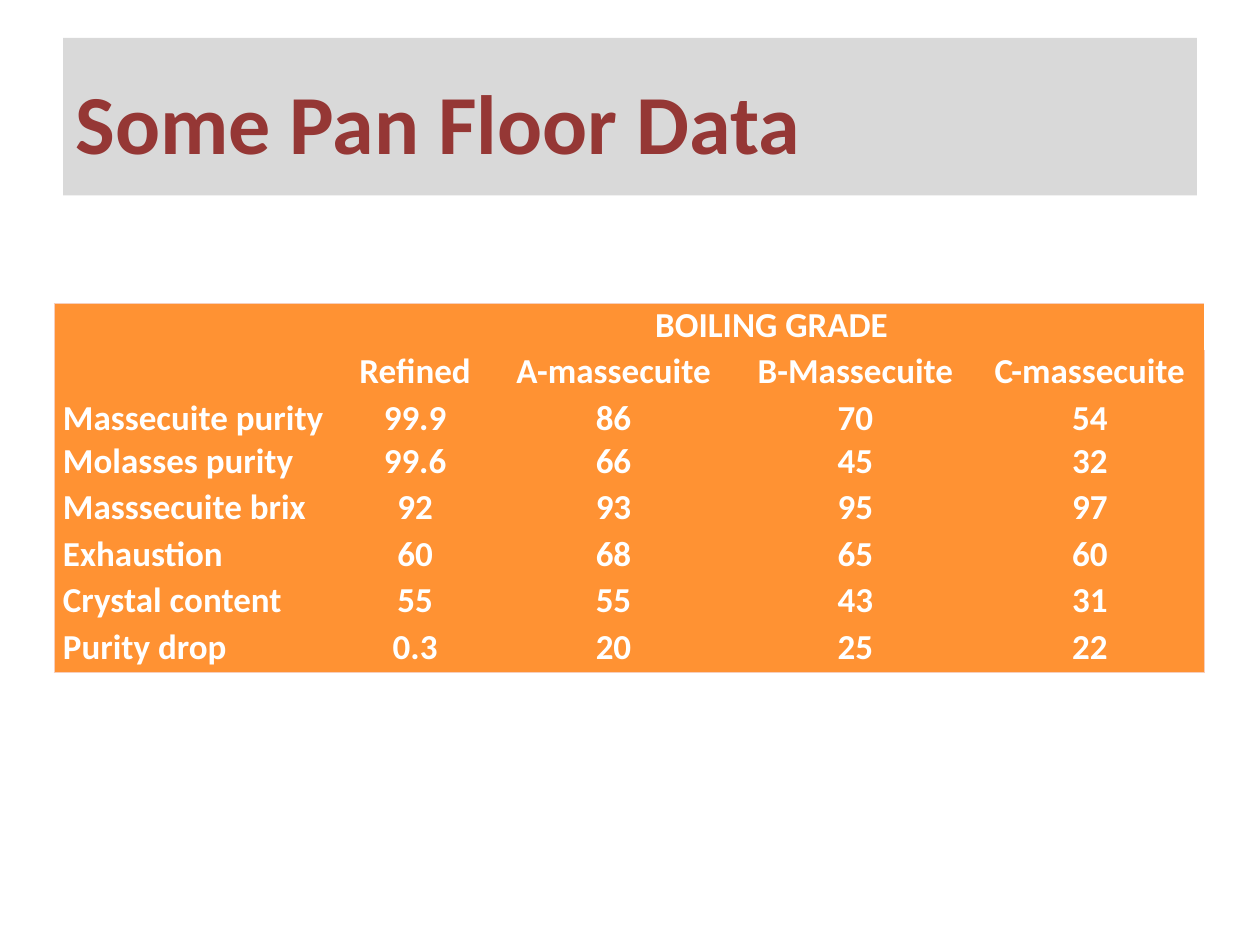
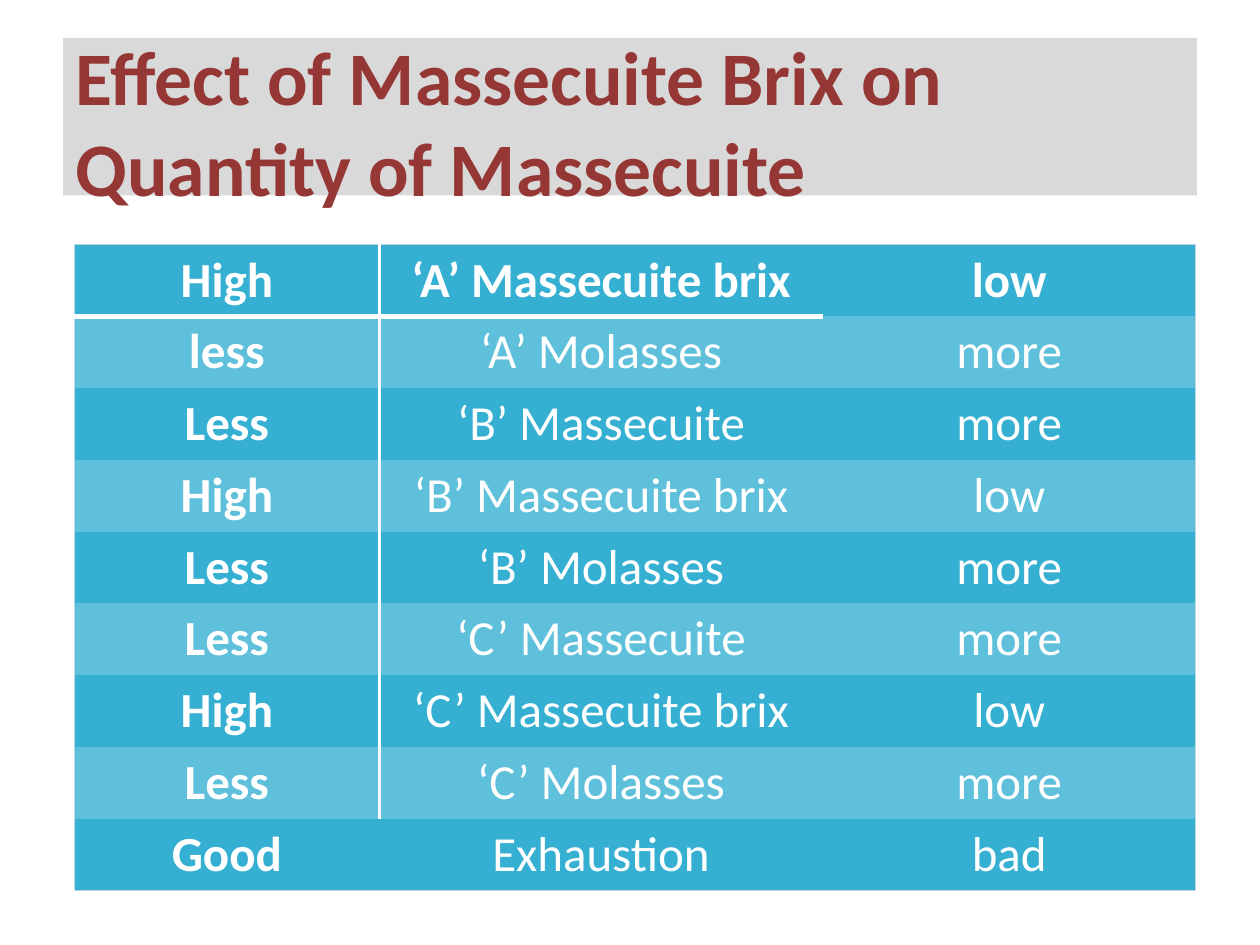
from lxml.etree import SubElement
from pptx import Presentation
from pptx.dml.color import RGBColor
from pptx.enum.text import MSO_ANCHOR, MSO_AUTO_SIZE, PP_ALIGN
from pptx.oxml.ns import qn
from pptx.util import Pt

PX = 9144  # 100 px to the inch
TITLE_ONLY = 5
PLAIN_TABLE_STYLE = "{2D5ABB26-0587-4C30-8999-92F81FD0307C}"
WHITE = "FFFFFF"
TITLE_BAND = "D9D9D9"
TITLE_RED = "953735"
ORANGE = "FF9233"
BLUE = "36B0D2"
LIGHT_BLUE = "5EC0DB"


def write(paragraph, text, size, color, bold, alignment):
    run = paragraph.add_run()
    run.text = text
    paragraph.alignment = alignment
    font_format = {"name": "Calibri", "size": Pt(size), "bold": bold}
    for name, value in font_format.items():
        setattr(run.font, name, value)
    run.font.color.rgb = RGBColor.from_string(color)


def add_border(cell, side, color, width):
    """Add one cell edge; call in the order L, R, T, B and before the fill."""
    line = SubElement(cell._tc.get_or_add_tcPr(), qn(f"a:ln{side}"), w=str(Pt(width)))
    fill = SubElement(line, qn("a:solidFill"))
    SubElement(fill, qn("a:srgbClr"), val=color)


pan_floor = {
    "title": "Some Pan Floor Data",
    "title_size": 48,
    "position": (43, 241),
    "columns": [226, 121, 194, 190, 182],
    "row_heights": [37, 37, 34] + [37] * 5,
    "text_size": 20,
    "anchor": MSO_ANCHOR.TOP,
    "first_column": PP_ALIGN.LEFT,
    "all_bold": True,
    "bands": [ORANGE],
    "outline": "F7CEBB",
    "merge": ((0, 1), (0, 4)),
    "inner_edges": {},
    "rows": [
        ["", "BOILING GRADE", "", "", ""],
        ["", "Refined", "A-massecuite", "B-Massecuite", "C-massecuite"],
        ["Massecuite purity", "99.9", "86", "70", "54"],
        ["Molasses purity", "99.6", "66", "45", "32"],
        ["Masssecuite brix", "92", "93", "95", "97"],
        ["Exhaustion", "60", "68", "65", "60"],
        ["Crystal content", "55", "55", "43", "31"],
        ["Purity drop", "0.3", "20", "25", "22"],
    ],
}
brix_rows = [
    ["High", "‘A’ Massecuite brix", "low"],
    ["less", "‘A’ Molasses", "more"],
    ["Less", "‘B’ Massecuite", "more"],
    ["High", "‘B’ Massecuite brix", "low"],
    ["Less", "‘B’ Molasses", "more"],
    ["Less", "‘C’ Massecuite", "more"],
    ["High", "‘C’ Massecuite brix", "low"],
    ["Less", "‘C’ Molasses", "more"],
    ["Good", "Exhaustion", "bad"],
]
column_rule = {(row, 0, "R"): 2 for row in range(len(brix_rows) - 1)}
header_rule = {(0, column, "B"): 3 for column in range(2)}
brix_effect = {
    "title": "Effect of Massecuite Brix on Quantity of Massecuite",
    "title_size": 43.2,
    "position": (59, 194),
    "columns": [242, 352, 296],
    "row_heights": [57] * len(brix_rows),
    "text_size": 28,
    "anchor": MSO_ANCHOR.MIDDLE,
    "first_column": PP_ALIGN.CENTER,
    "all_bold": False,
    "bands": [BLUE, LIGHT_BLUE],
    "outline": "BCD7E1",
    "merge": None,
    "inner_edges": column_rule | header_rule,
    "rows": brix_rows,
}

presentation = Presentation()
presentation.slide_width = 1000 * PX
presentation.slide_height = 750 * PX

for content in (pan_floor, brix_effect):
    slide = presentation.slides.add_slide(presentation.slide_layouts[TITLE_ONLY])

    title = slide.shapes.title
    title_box = {"left": 50, "top": 30, "width": 900, "height": 125}
    for name, value in title_box.items():
        setattr(title, name, value * PX)
    title.fill.solid()
    title.fill.fore_color.rgb = RGBColor.from_string(TITLE_BAND)
    frame_format = {
        "auto_size": MSO_AUTO_SIZE.NONE,
        "word_wrap": True,
        "vertical_anchor": MSO_ANCHOR.MIDDLE,
        "margin_top": 12 * PX,
        "margin_bottom": 5 * PX,
    }
    for name, value in frame_format.items():
        setattr(title.text_frame, name, value)
    write(title.text_frame.paragraphs[0], content["title"], content["title_size"],
          TITLE_RED, True, PP_ALIGN.LEFT)

    rows, columns = content["rows"], content["columns"]
    last_row, last_column = len(rows) - 1, len(columns) - 1
    left, top = content["position"]
    table = slide.shapes.add_table(
        len(rows), len(columns), left * PX, top * PX,
        sum(columns) * PX, sum(content["row_heights"]) * PX).table
    table.first_row = table.horz_banding = False
    table._tbl.tblPr.find(qn("a:tableStyleId")).text = PLAIN_TABLE_STYLE
    for column, width in zip(table.columns, columns):
        column.width = width * PX
    for row, height in zip(table.rows, content["row_heights"]):
        row.height = height * PX
    if content["merge"]:
        start, end = content["merge"]
        table.cell(*start).merge(table.cell(*end))

    cell_format = {
        "margin_left": 7 * PX,
        "margin_right": 7 * PX,
        "margin_top": 0,
        "margin_bottom": 0,
        "vertical_anchor": content["anchor"],
    }
    for row_index, texts in enumerate(rows):
        for column_index, text in enumerate(texts):
            cell = table.cell(row_index, column_index)
            for name, value in cell_format.items():
                setattr(cell, name, value)

            outer_edges = {
                "L": column_index == 0,
                "R": column_index == last_column,
                "T": row_index == 0,
                "B": row_index == last_row,
            }
            for side, is_outer in outer_edges.items():
                inner_width = content["inner_edges"].get((row_index, column_index, side))
                if is_outer:
                    add_border(cell, side, content["outline"], 0.75)
                elif inner_width:
                    add_border(cell, side, WHITE, inner_width)

            bands = content["bands"]
            cell.fill.solid()
            cell.fill.fore_color.rgb = RGBColor.from_string(bands[row_index % len(bands)])
            if text:
                bold = content["all_bold"] or row_index == 0 or column_index == 0
                alignment = PP_ALIGN.CENTER if column_index else content["first_column"]
                write(cell.text_frame.paragraphs[0], text, content["text_size"],
                      WHITE, bold, alignment)

presentation.save("out.pptx")
